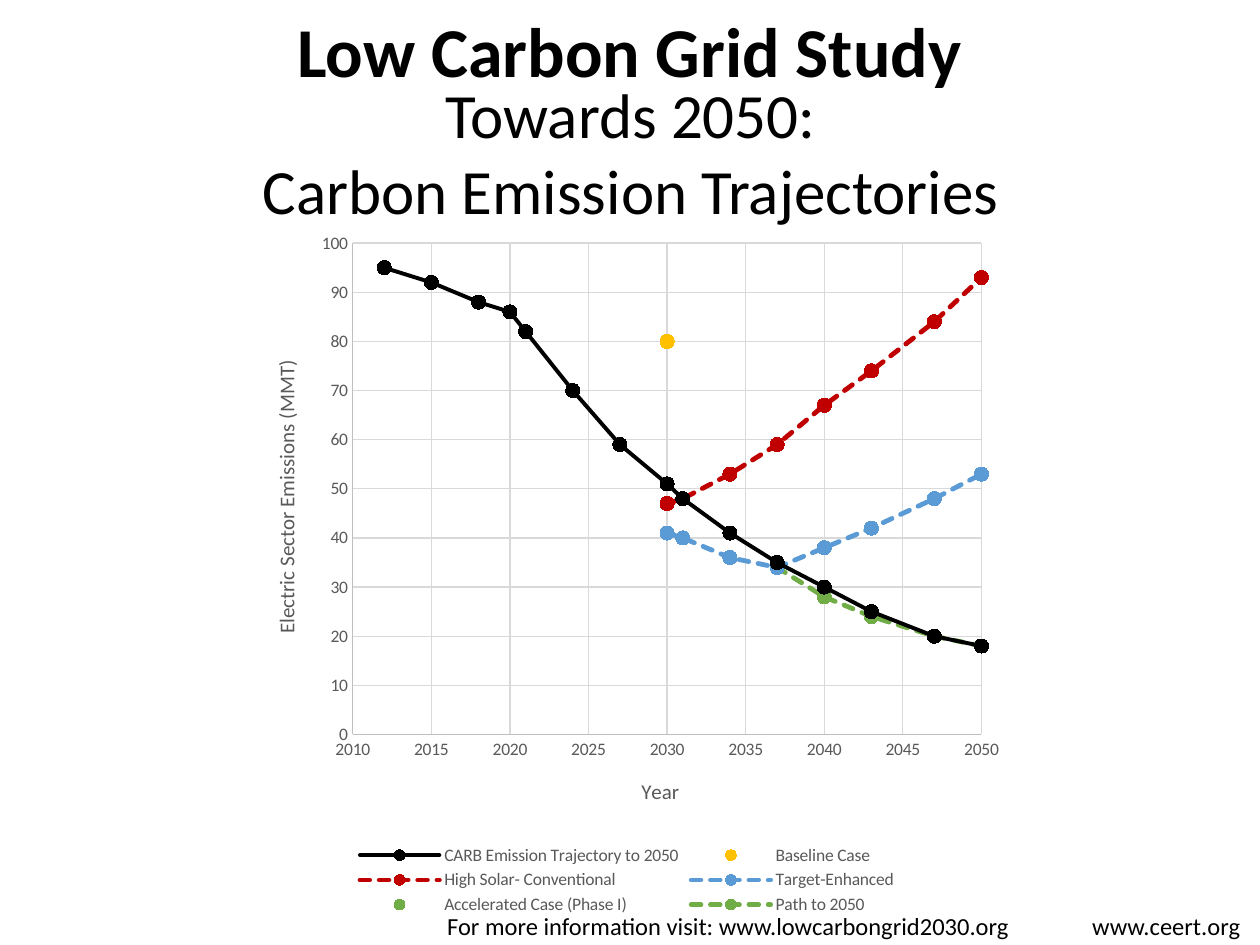
from lxml.etree import SubElement
from pptx import Presentation
from pptx.chart.data import XyChartData
from pptx.dml.color import RGBColor
from pptx.enum.chart import XL_CHART_TYPE, XL_LEGEND_POSITION, XL_MARKER_STYLE, XL_TICK_MARK
from pptx.enum.dml import MSO_LINE
from pptx.enum.text import MSO_ANCHOR, PP_ALIGN
from pptx.oxml.ns import qn
from pptx.util import Inches, Pt

BLACK = RGBColor(0x00, 0x00, 0x00)
GREY = RGBColor(0x59, 0x59, 0x59)
AXIS_GREY = RGBColor(0xBF, 0xBF, 0xBF)
GRID_GREY = RGBColor(0xD9, 0xD9, 0xD9)
GOLD = RGBColor(0xFF, 0xC0, 0x00)
RED = RGBColor(0xC0, 0x00, 0x00)
BLUE = RGBColor(0x5B, 0x9B, 0xD5)
GREEN = RGBColor(0x70, 0xAD, 0x47)
CHART_WIDTH, CHART_HEIGHT = 6.09, 5.56


def write(box, place, lines, size, bold=False, align=PP_ALIGN.CENTER):
    """Place a text shape and fill it with one paragraph per line."""
    box.left, box.top, box.width, box.height = [Inches(v) for v in place]
    frame = box.text_frame
    frame.word_wrap = True
    frame.vertical_anchor = MSO_ANCHOR.TOP
    frame.text = "\n".join(lines)
    for para in frame.paragraphs:
        para.alignment = align
        para.line_spacing = 1.0
        para.space_before = Pt(0)
        for span in para.runs:
            for name, value in {"name": "Calibri", "size": Pt(size), "bold": bold}.items():
                setattr(span.font, name, value)
            span.font.color.rgb = BLACK
    return frame


def lay_out(part, index, inner=False, **inches):
    """Fix a chart part at a place given in inches within the chart."""
    for old in part.findall(qn("c:layout")):
        part.remove(old)
    layout = SubElement(part, qn("c:layout"))
    part.insert(index, layout)
    manual = SubElement(layout, qn("c:manualLayout"))
    settings = {"layoutTarget": "inner"} if inner else {}
    settings.update(xMode="edge", yMode="edge")
    for tag, length in inches.items():
        settings[tag] = length / (CHART_WIDTH if tag in "xw" else CHART_HEIGHT)
    for tag, value in settings.items():
        SubElement(manual, qn(f"c:{tag}")).set("val", str(value))


deck = Presentation()
deck.slide_width, deck.slide_height = Inches(10), Inches(7.5)
page = deck.slides.add_slide(deck.slide_layouts[5])

# Emissions by year; each case but the last spans all years, with gaps
years = [2012, 2015, 2018, 2020, 2021, 2024, 2027, 2030, 2031, 2034, 2037, 2040, 2043, 2047, 2050]
cases = [  # name, years, first year with a value, values, colour, line width, marker size
    ("CARB Emission Trajectory to 2050", years, 2012,
     [95, 92, 88, 86, 82, 70, 59, 51, 48, 41, 35, 30, 25, 20, 18], BLACK, 2.25, 8),
    ("Baseline Case", years, 2030, [80], GOLD, None, 8),
    ("High Solar- Conventional", years, 2030, [47, 48, 53, 59, 67, 74, 84, 93], RED, 2.75, 8),
    ("Target-Enhanced", years, 2030, [41, 40, 36, 34, 38, 42, 48, 53], BLUE, 2.75, 8),
    ("Accelerated Case (Phase I)", years, 2037, [34], GREEN, None, 5),
    ("Path to 2050", years[10:], 2037, [34, 28, 24, 20, 18], GREEN, 2.75, 8),
]
data = XyChartData()
for name, case_years, first_year, values, *_ in cases:
    series = data.add_series(name)
    known = dict(zip(years[years.index(first_year):], values))
    for year in case_years:
        series.add_data_point(year, known.get(year))

# Chart
chart = page.shapes.add_chart(XL_CHART_TYPE.XY_SCATTER_LINES, Inches(1.95), Inches(1.74),
                              Inches(CHART_WIDTH), Inches(CHART_HEIGHT), data).chart
chart.has_title = False
chart.font.name, chart.font.size = "Calibri", Pt(10)
chart.font.color.rgb = GREY
plot = chart.plots[0]
plot.vary_by_categories = False
lay_out(chart.element.find(f".//{qn('c:plotArea')}"), 0, inner=True, x=0.85, y=0.19, w=4.99, h=3.9)

# Leave years without a value empty
for point in list(chart.element.iter(qn("c:pt"))):
    if point.findtext(qn("c:v")) in ("None", "", None):
        point.getparent().remove(point)

for series, (*_, colour, width, marker_size) in zip(plot.series, cases):
    series.smooth = False
    line = series.format.line
    if width is None:
        line.fill.background()
    else:
        line.color.rgb, line.width = colour, Pt(width)
        if colour != BLACK:
            line.dash_style = MSO_LINE.SQUARE_DOT
        line._ln.set("cap", "rnd")
    marker = series.marker
    marker.style, marker.size = XL_MARKER_STYLE.CIRCLE, marker_size
    marker.format.fill.solid()
    marker.format.fill.fore_color.rgb = colour
    marker.format.line.color.rgb = colour

# Axes
axes = [
    (chart.category_axis, "Year", 2010, 2050, 5, (3.11, 4.4)),
    (chart.value_axis, "Electric Sector Emissions (MMT)", 0, 100, 10, (0.18, 1.09)),
]
for axis, title, low, high, step, (x, y) in axes:
    settings = {"minimum_scale": low, "maximum_scale": high, "major_unit": step,
                "has_major_gridlines": True, "major_tick_mark": XL_TICK_MARK.NONE,
                "minor_tick_mark": XL_TICK_MARK.NONE}
    for name, value in settings.items():
        setattr(axis, name, value)
    axis.tick_labels.font.size = Pt(10)
    axis.tick_labels.font.color.rgb = GREY
    axis.tick_labels.number_format = "General"
    axis.tick_labels.number_format_is_linked = False
    for line, colour in ((axis.format.line, AXIS_GREY),
                         (axis.major_gridlines.format.line, GRID_GREY)):
        line.color.rgb, line.width = colour, Pt(0.75)
    frame = axis.axis_title.text_frame
    frame.text = title
    font = frame.paragraphs[0].runs[0].font
    font.name, font.size, font.bold = "Calibri", Pt(12), False
    font.color.rgb = GREY
    lay_out(axis.axis_title._element, 1, x=x, y=y)
turned = chart.value_axis.axis_title._element.find(f".//{qn('a:bodyPr')}")
turned.set("rot", "-5400000")
turned.set("vert", "horz")

# Legend
chart.has_legend = True
legend = chart.legend
legend.position = XL_LEGEND_POSITION.BOTTOM
legend.include_in_layout = False
legend.font.name, legend.font.size = "Calibri", Pt(10)
legend.font.color.rgb = GREY
lay_out(legend._element, 1, x=0.85, y=4.93, w=4.35, h=0.63)

# Headings
write(page.shapes.title, (1.68, 0.01, 6.63, 0.77), ["Low Carbon Grid Study"], 40, bold=True)
write(page.shapes.add_textbox(0, 0, 0, 0), (1.31, 0.55, 7.39, 1.31),
      ["Towards 2050:", "Carbon Emission Trajectories"], 36)

# Footer, with a tab stop before the second address
footer = write(page.shapes.add_textbox(0, 0, 0, 0), (3.45, 7.18, 6.55, 0.34),
               ["For more information visit: www.lowcarbongrid2030.org\twww.ceert.org"],
               14, align=PP_ALIGN.LEFT)
tabs = SubElement(footer.paragraphs[0]._p.get_or_add_pPr(), qn("a:tabLst"))
tab = SubElement(tabs, qn("a:tab"))
tab.set("pos", str(Inches(5.12)))
tab.set("algn", "l")

deck.save("out.pptx")
